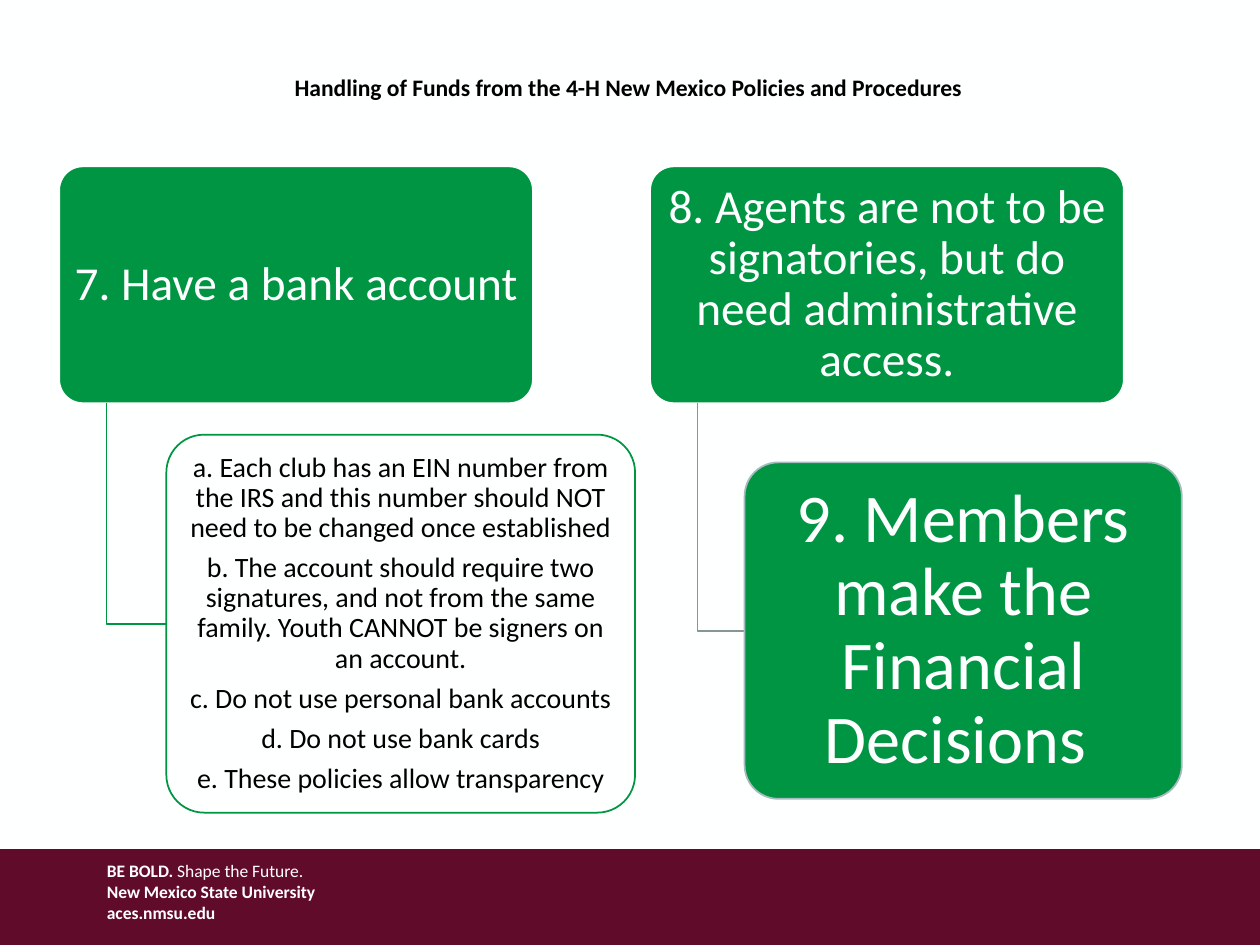
"""Build the slide on handling 4-H club funds."""
from lxml.etree import SubElement
from pptx import Presentation
from pptx.dml.color import RGBColor
from pptx.enum.shapes import MSO_SHAPE
from pptx.enum.text import MSO_ANCHOR, PP_ALIGN
from pptx.oxml.ns import qn
from pptx.util import Inches, Pt

FONT = "Calibri"
PAPER = RGBColor(0xFE, 0xFF, 0xFF)
WHITE = RGBColor(0xFF, 0xFF, 0xFF)
BLACK = RGBColor(0x00, 0x00, 0x00)
CRIMSON = RGBColor(0x61, 0x0B, 0x2B)
GREEN = RGBColor(0x00, 0x95, 0x43)
SLATE = RGBColor(0x86, 0x95, 0x98)
MIST = RGBColor(0xA7, 0xBA, 0xBE)

HEAD_TOP, HEAD_WIDTH, HEAD_HEIGHT = 1.32, 3.76, 1.88
HEAD_BOTTOM = HEAD_TOP + HEAD_HEIGHT
STEM_OFFSET = HEAD_WIDTH / 10

ACCOUNT_RULES = [
    "a. Each club has an EIN number from the IRS and this number should NOT need to be changed once established",
    "b. The account should require two signatures, and not from the same family. Youth CANNOT be signers on an account.",
    "c. Do not use personal bank accounts",
    "d. Do not use bank cards",
    "e. These policies allow transparency",
]
FOOTER = [
    [("BE BOLD. ", True), ("Shape the Future.", False)],
    [("New Mexico State University", True)],
    [("aces.nmsu.edu", True)],
]


def add_run(paragraph, text, size, color, bold=False):
    """Append one styled run to a paragraph."""
    run = paragraph.add_run()
    run.text = text
    run.font.name = FONT
    run.font.size = Pt(size)
    run.font.bold = bold
    run.font.color.rgb = color


def add_lines(slide, box, lines, size, color, wrap=True):
    """Add a text box whose lines are lists of (text, bold) pairs."""
    frame = slide.shapes.add_textbox(*map(Inches, box)).text_frame
    frame.word_wrap = wrap
    for index, line in enumerate(lines):
        paragraph = frame.add_paragraph() if index else frame.paragraphs[0]
        for text, bold in line:
            add_run(paragraph, text, size, color, bold)


def add_band(slide):
    """Add the footer band across the slide."""
    band = slide.shapes.add_shape(
        MSO_SHAPE.RECTANGLE, Inches(0), Inches(6.74), Inches(10), Inches(0.76)
    )
    band.shadow.inherit = False
    band.fill.solid()
    band.fill.fore_color.rgb = CRIMSON
    band.line.fill.background()


def add_card(slide, box, texts, size, color, fill, line, inset, alpha=None):
    """Add a rounded card with centred paragraphs."""
    card = slide.shapes.add_shape(MSO_SHAPE.ROUNDED_RECTANGLE, *map(Inches, box))
    card.adjustments[0] = 0.1
    card.shadow.inherit = False
    card.fill.solid()
    card.fill.fore_color.rgb = fill
    if alpha is not None:
        tint = card.fill._xPr.find(qn("a:solidFill"))[0]
        SubElement(tint, qn("a:alpha")).set("val", str(alpha * 1000))
    card.line.color.rgb = line
    card.line.width = Pt(1)
    frame = card.text_frame
    frame.word_wrap = True
    frame.vertical_anchor = MSO_ANCHOR.MIDDLE
    frame.margin_left = frame.margin_right = Inches(inset)
    frame.margin_top = frame.margin_bottom = Inches(inset * 0.65)
    for index, text in enumerate(texts):
        paragraph = frame.add_paragraph() if index else frame.paragraphs[0]
        paragraph.alignment = PP_ALIGN.CENTER
        paragraph.line_spacing = 0.9
        paragraph.space_after = Pt(size * 0.35)
        add_run(paragraph, text, size, color)


def add_branch(slide, head_left, detail, color):
    """Add the bent line from a heading card down to its detail card."""
    left, top, _, height = detail
    stem, middle = Inches(head_left + STEM_OFFSET), Inches(top + height / 2)
    builder = slide.shapes.build_freeform(stem, Inches(HEAD_BOTTOM))
    builder.add_line_segments([(stem, middle), (Inches(left), middle)], close=False)
    branch = builder.convert_to_shape()
    branch.shadow.inherit = False
    branch.fill.background()
    branch.line.color.rgb = color
    branch.line.width = Pt(1)


def add_heading_card(slide, left, text):
    """Add one of the two green heading cards."""
    box = (left, HEAD_TOP, HEAD_WIDTH, HEAD_HEIGHT)
    add_card(slide, box, [text], 27, PAPER, GREEN, PAPER, 0.05)


def main():
    """Build and save the slide."""
    deck = Presentation()
    deck.slide_width, deck.slide_height = Inches(10), Inches(7.5)
    slide = deck.slides.add_slide(deck.slide_layouts[6])
    slide.background.fill.solid()
    slide.background.fill.fore_color.rgb = PAPER

    add_band(slide)
    add_lines(slide, (0.75, 6.78, 2.88, 0.7), FOOTER, 10, WHITE)
    title = "Handling of Funds from the 4-H New Mexico Policies and Procedures"
    add_lines(slide, (2.24, 0.53, 5.6, 0.33), [[(title, True)]], 13.5, BLACK, wrap=False)

    account_left, agents_left = 0.47, 5.16
    rules_box = (1.32, 3.45, 3.72, 3)
    decisions_box = (5.91, 3.67, 3.47, 2.67)

    add_heading_card(slide, account_left, "7. Have a bank account")
    add_branch(slide, account_left, rules_box, GREEN)
    add_card(slide, rules_box, ACCOUNT_RULES, 16, BLACK, PAPER, GREEN, 0.03, alpha=90)

    add_heading_card(
        slide,
        agents_left,
        "8. Agents are not to be signatories, but do need administrative access.",
    )
    add_branch(slide, agents_left, decisions_box, SLATE)
    add_card(
        slide, decisions_box, ["9. Members make the Financial Decisions "],
        39, PAPER, GREEN, MIST, 0.08,
    )
    deck.save("out.pptx")


if __name__ == "__main__":
    main()
